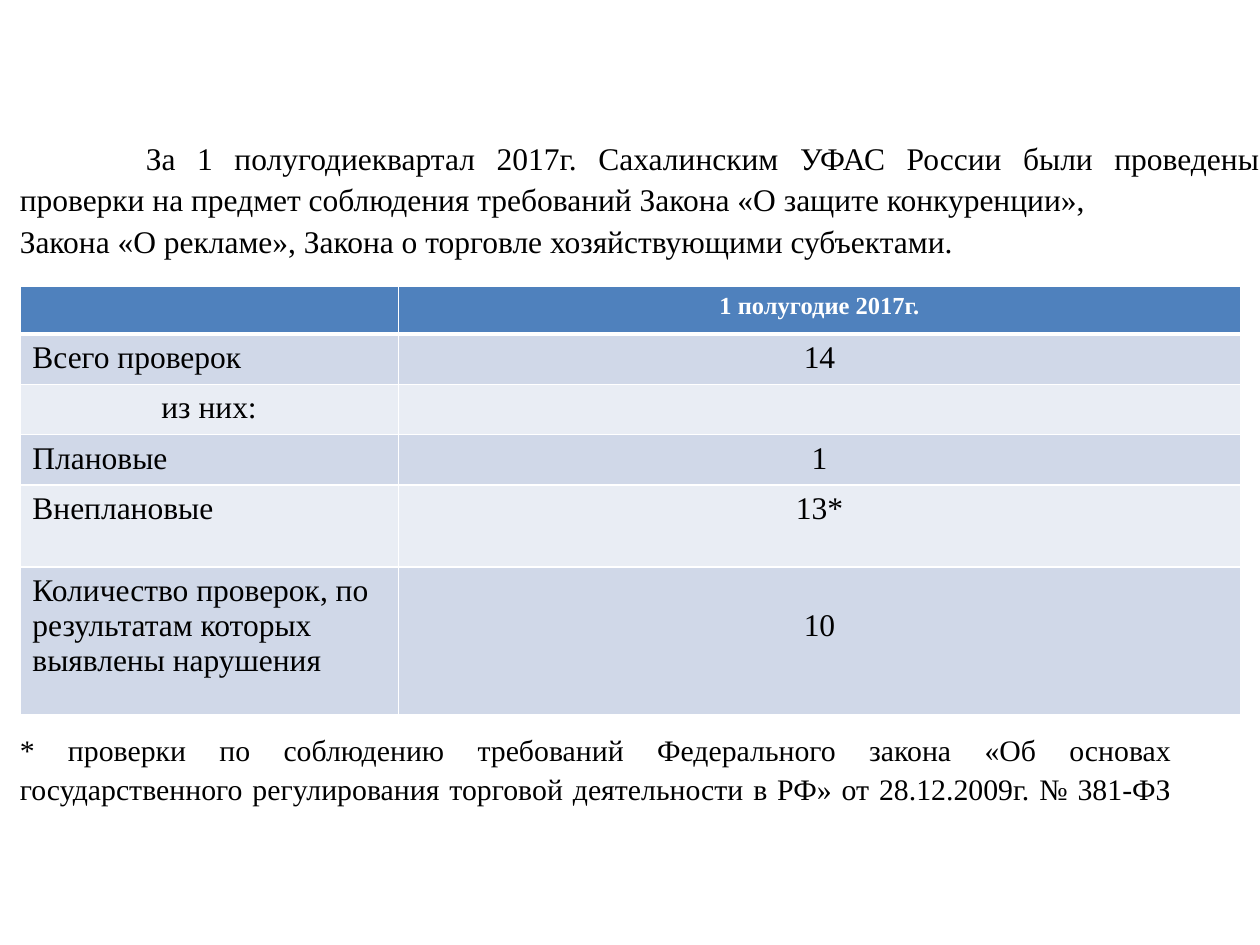
from lxml.etree import SubElement
from pptx import Presentation
from pptx.dml.color import RGBColor
from pptx.enum.text import MSO_ANCHOR, PP_ALIGN as Align
from pptx.oxml.ns import qn
from pptx.util import Cm, Pt

BLACK = RGBColor(0x00, 0x00, 0x00)
WHITE = RGBColor(0xFF, 0xFF, 0xFF)
HEADER_BLUE = RGBColor(0x4F, 0x81, 0xBD)
BANDS = (RGBColor(0xE9, 0xED, 0xF4), RGBColor(0xD0, 0xD8, 0xE8))
SERIF = "Times New Roman"

INTRO = (
    "За 1 полугодиеквартал 2017г. Сахалинским УФАС России были проведены "
    "проверки на предмет соблюдения требований Закона «О защите конкуренции»,",
    "Закона «О рекламе», Закона о торговле хозяйствующими субъектами.",
)
FOOTNOTE = (
    "* проверки по соблюдению требований Федерального закона «Об основах "
    "государственного регулирования торговой деятельности в РФ» "
    "от 28.12.2009г. № 381-ФЗ\v"
)
INSPECTIONS = (
    ("", "1 полугодие 2017г."),
    ("Всего проверок", "14"),
    ("из них:", ""),
    ("Плановые", "1"),
    ("Внеплановые", "13*"),
    ("Количество проверок, по результатам которых выявлены нарушения", "10"),
)
COLUMN_SHARES = (0.31, 0.69)
ROW_HEIGHTS = (0.96, 0.96, 0.96, 0.96, 1.65, 2.98)


def write(paragraph, text, size=18, color=BLACK, bold=False,
          align=Align.LEFT, spacing=None, first_indent=0):
    if first_indent:
        paragraph._p.get_or_add_pPr().set("indent", str(Cm(first_indent)))
    paragraph.text = text
    paragraph.alignment = align
    paragraph.line_spacing = spacing
    for run in paragraph.runs:
        run.font.name = SERIF
        run.font.size = Pt(size)
        run.font.bold = bold
        run.font.color.rgb = color


def add_text_frame(slide, left, top, width, height):
    frame = slide.shapes.add_textbox(
        Cm(left), Cm(top), Cm(width), Cm(height)).text_frame
    frame.word_wrap = True
    frame.vertical_anchor = MSO_ANCHOR.TOP
    frame.margin_left = frame.margin_right = 0
    frame.margin_top = frame.margin_bottom = 0
    return frame


def add_intro(slide, left, top, width, height):
    frame = add_text_frame(slide, left, top, width, height)
    write(frame.paragraphs[0], INTRO[0], align=Align.JUSTIFY,
          spacing=1.09, first_indent=2.54)
    write(frame.add_paragraph(), INTRO[1], align=Align.JUSTIFY, spacing=1.09)


def add_footnote(slide, left, top, width, height):
    frame = add_text_frame(slide, left, top, width, height)
    write(frame.paragraphs[0], FOOTNOTE, size=17, align=Align.JUSTIFY,
          spacing=1.09)


def set_borders(cell, widths):
    properties = cell._tc.get_or_add_tcPr()
    for position, (side, points) in enumerate(widths.items()):
        border = SubElement(properties, qn(f"a:{side}"), w=str(Pt(points)))
        fill = SubElement(border, qn("a:solidFill"))
        SubElement(fill, qn("a:srgbClr"), val=str(WHITE))
        properties.insert(position, border)


def add_inspections(slide, left, top, width):
    table = slide.shapes.add_table(
        len(INSPECTIONS), len(COLUMN_SHARES), Cm(left), Cm(top),
        Cm(width), Cm(sum(ROW_HEIGHTS))).table
    for column, share in zip(table.columns, COLUMN_SHARES):
        column.width = Cm(round(width * share, 2))
    for row_index, (labels, height) in enumerate(zip(INSPECTIONS, ROW_HEIGHTS)):
        table.rows[row_index].height = Cm(height)
        header = row_index == 0
        for column_index, text in enumerate(labels):
            cell = table.cell(row_index, column_index)
            cell.fill.solid()
            cell.fill.fore_color.rgb = (
                HEADER_BLUE if header else BANDS[row_index % 2])
            set_borders(cell, {
                "lnL": 1, "lnR": 1,
                "lnT": 3 if row_index == 1 else 1,
                "lnB": 3 if header else 1})
            if not text:
                cell.margin_top = cell.margin_bottom = 0
                continue
            centred = column_index == 1 or text == "из них:"
            write(cell.text_frame.paragraphs[0], text,
                  size=14 if header else 18,
                  color=WHITE if header else BLACK, bold=header,
                  align=Align.CENTER if centred else Align.LEFT)
    table.cell(len(INSPECTIONS) - 1, 1).margin_top = Cm(0.83)


def main():
    presentation = Presentation()
    presentation.slide_width = Cm(25.4)
    presentation.slide_height = Cm(19.05)
    slide = presentation.slides.add_slide(presentation.slide_layouts[6])
    add_intro(slide, left=0.4, top=2.74, width=25, height=2.4)
    add_inspections(slide, left=0.4, top=5.77, width=24.61)
    add_footnote(slide, left=0.4, top=14.68, width=23.22, height=2.18)
    presentation.save("out.pptx")


if __name__ == "__main__":
    main()
